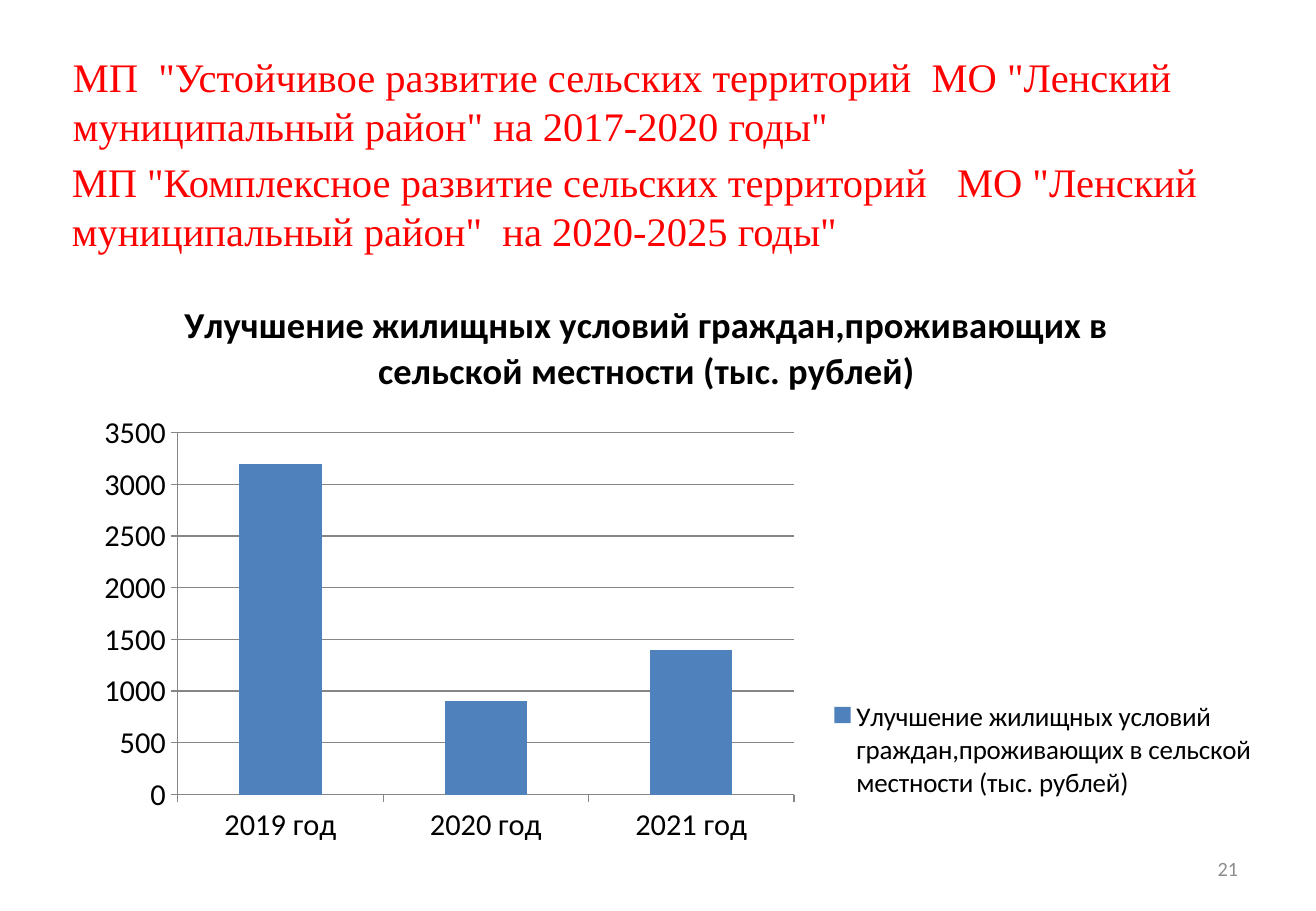
import pptx
import pptx.util
import pptx.chart.data
import pptx.dml.color
import pptx.enum.chart
import pptx.enum.text
import pptx.oxml

RED = pptx.dml.color.RGBColor(0xFF, 0, 0)
GREY = pptx.dml.color.RGBColor(0x8C, 0x8C, 0x8C)
LINE = pptx.dml.color.RGBColor(0x86, 0x86, 0x86)
BLUE = pptx.dml.color.RGBColor(0x4F, 0x81, 0xBD)
BLACK = pptx.dml.color.RGBColor(0, 0, 0)

LEFT = pptx.enum.text.PP_ALIGN.LEFT
RIGHT = pptx.enum.text.PP_ALIGN.RIGHT
TOP = pptx.enum.text.MSO_ANCHOR.TOP
MIDDLE = pptx.enum.text.MSO_ANCHOR.MIDDLE

TEXTS = [
    ("21", (943, 844, 307, 49), 12, "Calibri", GREY, RIGHT, MIDDLE),
    ('МП  "Устойчивое развитие сельских территорий  МО "Ленский муниципальный район" на 2017-2020 годы"',
     (61, 46, 1211, 111), 24, "Times New Roman", RED, LEFT, TOP),
    ('МП "Комплексное развитие сельских территорий   МО "Ленский муниципальный район"  на 2020-2025 годы"',
     (60, 151, 1180, 111), 24, "Times New Roman", RED, LEFT, TOP),
]
NAME = "Улучшение жилищных условий граждан,проживающих в сельской местности (тыс. рублей)"
COSTS = {"2019 год": 3200, "2020 год": 900, "2021 год": 1400}
CHART = (83, 275, 1185, 584)
PLOT = (180, 435, 619, 363)
LEGEND = (832, 703, 427, 102)
TITLE = (173, 294)
SCALE = 914400 / 121.5


def emu(px):
    return round(px * SCALE)


def style(font, size, name, color):
    font.size = pptx.util.Pt(size)
    font.name = name
    font.color.rgb = color


def layout(box, inner=False):
    x, y, w, h = CHART
    parts = [(box[0] - x) / w, (box[1] - y) / h]
    parts += [size / full for size, full in zip(box[2:], (w, h))]
    tags = '<c:layoutTarget val="inner"/>' if inner else ""
    tags += '<c:xMode val="edge"/><c:yMode val="edge"/>'
    tags += "".join(f'<c:{key} val="{part:.2f}"/>' for key, part in zip("xywh", parts))
    space = "http://schemas.openxmlformats.org/drawingml/2006/chart"
    return pptx.oxml.parse_xml(
        f'<c:layout xmlns:c="{space}"><c:manualLayout>{tags}</c:manualLayout></c:layout>')


def place(node, box, inner=False):
    for old in node.xpath("./c:layout"):
        node.remove(old)
    ahead = node.xpath("./c:tx | ./c:legendPos")
    node.insert(len(ahead), layout(box, inner))


deck = pptx.Presentation()
deck.slide_width, deck.slide_height = emu(1316), emu(911)
slide = deck.slides.add_slide(deck.slide_layouts[6])

for text, box, size, face, color, align, anchor in TEXTS:
    frame = slide.shapes.add_textbox(*map(emu, box)).text_frame
    frame.word_wrap = True
    frame.vertical_anchor = anchor
    para = frame.paragraphs[0]
    para.text = text
    para.alignment = align
    style(para.font, size, face, color)

data = pptx.chart.data.CategoryChartData()
data.categories = list(COSTS)
data.add_series(NAME, list(COSTS.values()))
chart = slide.shapes.add_chart(
    pptx.enum.chart.XL_CHART_TYPE.COLUMN_STACKED, *map(emu, CHART), data).chart
style(chart.font, 18, "Calibri", BLACK)

chart.has_title = True
title = chart.chart_title
head = title.text_frame.paragraphs[0]
head.text = NAME
style(head.font, 21.6, "Calibri", BLACK)
head.font.bold = True
title.include_in_layout = False

chart.has_legend = True
legend = chart.legend
legend.position = pptx.enum.chart.XL_LEGEND_POSITION.RIGHT
legend.include_in_layout = False
style(legend.font, 16, "Calibri", BLACK)

bars = chart.plots[0]
bars.gap_width = 150
bars.overlap = 100
bars.vary_by_categories = False
fill = bars.series[0].format.fill
fill.solid()
fill.fore_color.rgb = BLUE

for axis in (chart.category_axis, chart.value_axis):
    axis.major_tick_mark = pptx.enum.chart.XL_TICK_MARK.OUTSIDE
    axis.format.line.color.rgb = LINE
value = chart.value_axis
value.minimum_scale, value.maximum_scale, value.major_unit = 0, 3500, 500
value.has_major_gridlines = True
value.major_gridlines.format.line.color.rgb = LINE

root = chart.element
place(root.xpath(".//c:plotArea")[0], PLOT, True)
place(root.xpath(".//c:legend")[0], LEGEND)
place(root.xpath("./c:chart/c:title")[0], TITLE)

deck.save("out.pptx")
